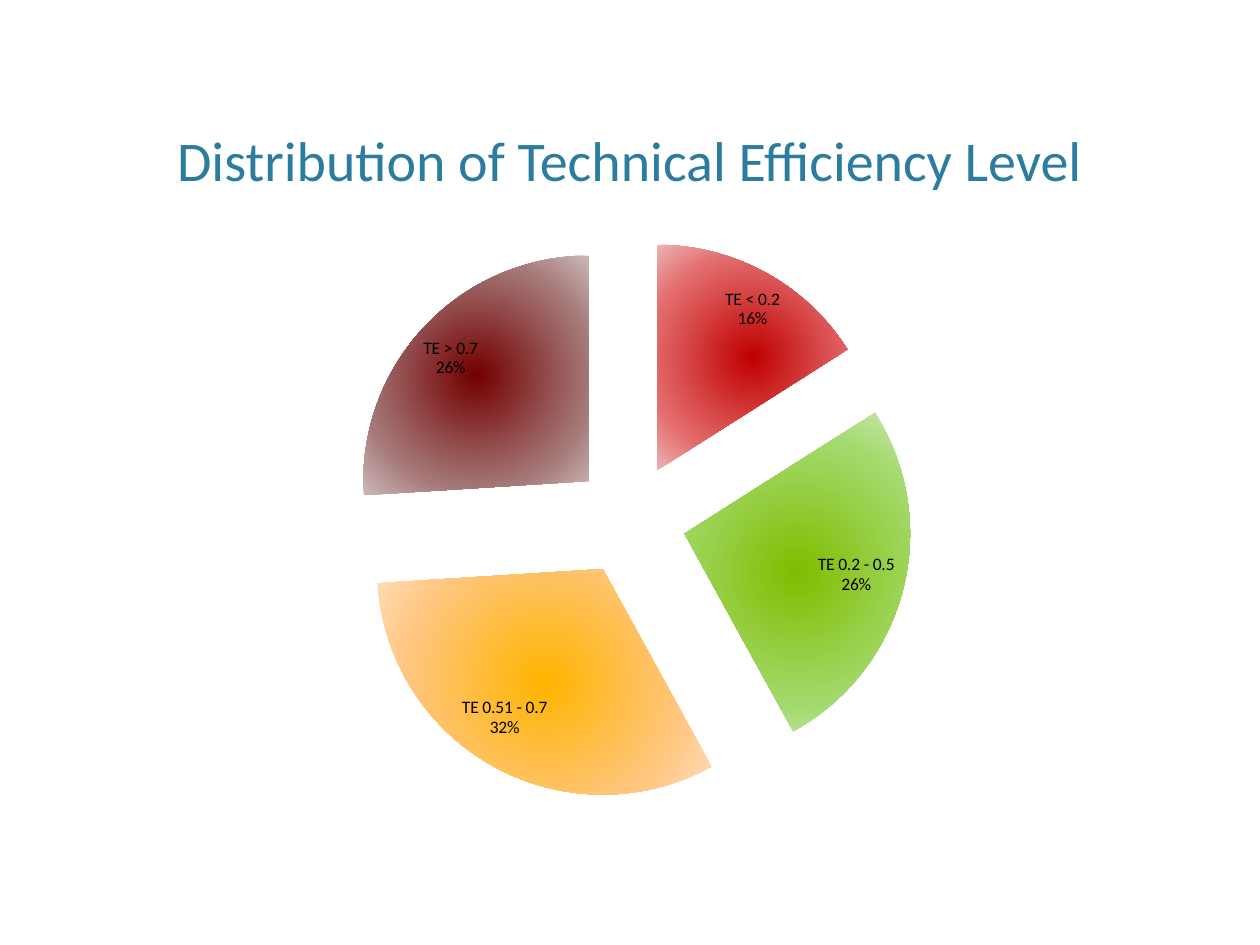
from pptx import Presentation
from pptx import oxml
from pptx.chart import data
from pptx.dml.color import RGBColor
from pptx.enum import chart as ch, text
from pptx.oxml import ns
from pptx.util import Pt

FONT = "Calibri"
TITLE = "Distribution of Technical Efficiency Level"
STOPS = (0, 69, 100)
# category, percent, gradient colours from the centre outwards
SLICES = [
    ("TE < 0.2", 16, ("C00000", "E36B6B", "ECB3B3")),
    ("TE 0.2 - 0.5", 26, ("80BC00", "A3DA6D", "CBE7B4")),
    ("TE 0.51 - 0.7", 32, ("FFB400", "FFC67F", "FFDEBD")),
    ("TE > 0.7", 26, ("730000", "A57777", "CCB9B9")),
]
EXPLOSION = 25
LEFT, WIDTH = 43.2, 633.6
TITLE_TOP, TITLE_HEIGHT = 41.76, 72
CHART_TOP, CHART_HEIGHT = 126, 342


def rgb(hex_color):
    return RGBColor.from_string(hex_color)


def set_font(font, size, color):
    font.name, font.size = FONT, Pt(size)
    font.color.rgb = rgb(color)


def add_text(s, words, left, top, width, height, size=10, color="000000",
             align=text.PP_ALIGN.CENTER, anchor=text.MSO_ANCHOR.BOTTOM):
    tf = s.shapes.add_textbox(Pt(left), Pt(top), Pt(width), Pt(height)).text_frame
    tf.word_wrap = True
    tf.vertical_anchor = anchor
    p = tf.paragraphs[0]
    p.alignment = align
    r = p.add_run()
    r.text = words
    set_font(r.font, size, color)


def radial_fill(colors):
    stops = "".join(
        f'<a:gs pos="{pos * 1000}"><a:srgbClr val="{color}"/></a:gs>'
        for pos, color in zip(STOPS, colors))
    return oxml.parse_xml(
        f'<a:gradFill {ns.nsdecls("a")} rotWithShape="1"><a:gsLst>{stops}</a:gsLst>'
        '<a:path path="circle"><a:fillToRect l="100000" t="100000" '
        'r="100000" b="100000"/></a:path></a:gradFill>')


def add_pie(s):
    names, percents, gradients = zip(*SLICES)
    pie_data = data.CategoryChartData(number_format="General")
    pie_data.categories = names
    pie_data.add_series("Series 1", percents)
    chart = s.shapes.add_chart(
        ch.XL_CHART_TYPE.PIE, Pt(LEFT), Pt(CHART_TOP), Pt(WIDTH),
        Pt(CHART_HEIGHT), pie_data).chart
    chart.has_title = chart.has_legend = False
    set_font(chart.font, 10, "000000")

    plot = chart.plots[0]
    plot.vary_by_categories = True
    series = plot.series[0]
    for i, colors in enumerate(gradients):
        fmt = series.points[i].format
        fmt.line.fill.background()
        fmt.fill.solid()
        solid = series._element.findall(ns.qn("c:dPt"))[i].find(
            f'{ns.qn("c:spPr")}/{ns.qn("a:solidFill")}')
        solid.getparent().replace(solid, radial_fill(colors))
    series._element.find(ns.qn("c:dPt")).addprevious(oxml.parse_xml(
        f'<c:explosion {ns.nsdecls("c")} val="{EXPLOSION}"/>'))

    labels = series.data_labels
    labels.show_category_name = labels.show_percentage = True
    labels.show_value = False
    labels.number_format = "0%"
    labels.number_format_is_linked = False
    labels.position = ch.XL_LABEL_POSITION.BEST_FIT
    set_font(labels.font, 10, "000000")
    labels._element.find(ns.qn("c:showBubbleSize")).addnext(oxml.parse_xml(
        f'<c:separator {ns.nsdecls("c")}>\n</c:separator>'))


def main():
    prs = Presentation()
    prs.slide_width, prs.slide_height = Pt(720), Pt(540)
    s = prs.slides.add_slide(prs.slide_layouts[6])
    add_text(s, TITLE, LEFT, TITLE_TOP, WIDTH, TITLE_HEIGHT, size=32, color="2C7C9F")
    add_pie(s)
    prs.save("out.pptx")


if __name__ == "__main__":
    main()
